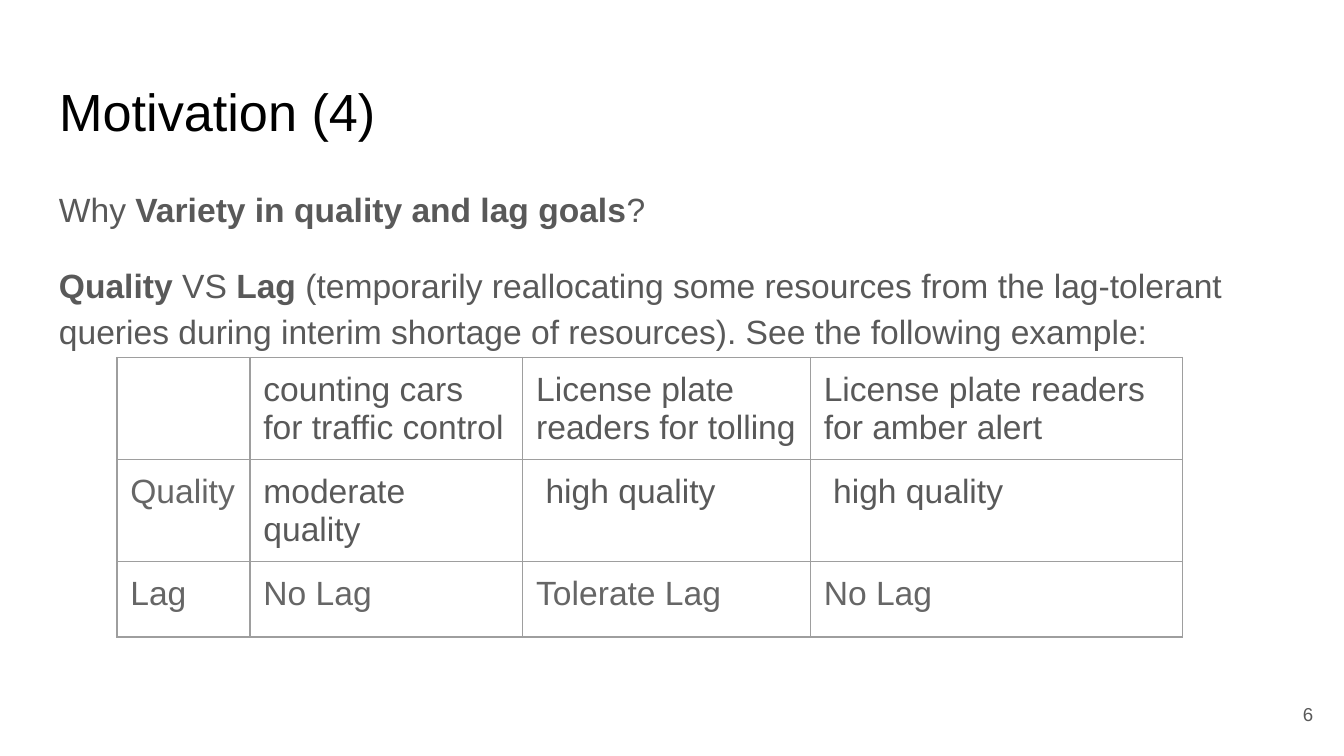
from pptx import Presentation
from pptx.dml.color import RGBColor
from pptx.enum.text import MSO_ANCHOR, MSO_AUTO_SIZE, PP_ALIGN
from pptx.oxml import parse_xml
from pptx.oxml.ns import nsdecls
from pptx.util import Inches, Pt

COLORS = {"title": "000000", "body": "595959", "label": "666666", "border": "9E9E9E"}
PAD = Inches(0.1)


def write(paragraph, text, size=18, color="body", bold=False, align=PP_ALIGN.LEFT):
    paragraph.alignment = align
    run = paragraph.add_run()
    run.text = text
    run.font.name = "Arial"
    run.font.size = Pt(size)
    run.font.bold = bold
    run.font.color.rgb = RGBColor.from_string(COLORS[color])


def set_frame(frame, anchor=MSO_ANCHOR.TOP):
    frame.word_wrap = True
    frame.auto_size = MSO_AUTO_SIZE.NONE
    frame.vertical_anchor = anchor
    frame.margin_left = frame.margin_right = PAD
    frame.margin_top = frame.margin_bottom = PAD
    return frame.paragraphs[0]


prs = Presentation()
prs.slide_width = Inches(10)
prs.slide_height = prs.slide_width * 9 // 16
slide = prs.slides.add_slide(prs.slide_layouts[5])
margin = Inches(0.34)
content_width = prs.slide_width - 2 * margin

title = slide.shapes.title
title.left, title.top = margin, Inches(0.49)
title.width, title.height = content_width, Inches(0.63)
write(set_frame(title.text_frame), "Motivation (4)", size=28, color="title")

question = slide.shapes.add_textbox(margin, Inches(1.26), content_width, Inches(3.74))
why = set_frame(question.text_frame)
tradeoff = question.text_frame.add_paragraph()
tradeoff.space_before = tradeoff.space_after = Pt(16)
statements = [
    (why, [("Why ", False), ("Variety in quality and lag goals", True), ("?", False)]),
    (tradeoff, [
        ("Quality", True),
        (" VS ", False),
        ("Lag", True),
        (" (temporarily reallocating some resources from the lag-tolerant queries during "
         "interim shortage of resources). See the following example:", False),
    ]),
]
for paragraph, pieces in statements:
    paragraph.line_spacing = 1.15
    for text, bold in pieces:
        write(paragraph, text, bold=bold)

goals = [
    ["", "counting cars for traffic control", "License plate readers for tolling",
     "License plate readers for amber alert"],
    ["Quality", "moderate quality", " high quality", " high quality"],
    ["Lag", "No Lag", "Tolerate Lag", "No Lag"],
]
column_widths = [0.99, 2.03, 2.14, 2.77]
row_heights = [0.76, 0.76, 0.56]
table = slide.shapes.add_table(
    len(goals), len(column_widths), Inches(0.87), Inches(2.66),
    Inches(sum(column_widths)), Inches(sum(row_heights))).table
table.first_row = table.horz_banding = False
for column, width in zip(table.columns, column_widths):
    column.width = Inches(width)
for row, height in zip(table.rows, row_heights):
    row.height = Inches(height)

for r, goal in enumerate(goals):
    for c, text in enumerate(goal):
        cell = table.cell(r, c)
        cell.margin_left = cell.margin_right = PAD
        cell.margin_top = cell.margin_bottom = PAD
        cell.vertical_anchor = MSO_ANCHOR.TOP
        properties = cell._tc.get_or_add_tcPr()
        for side in "LRTB":
            properties.append(parse_xml(
                f'<a:ln{side} {nsdecls("a")} w="{Pt(0.75)}"><a:solidFill>'
                f'<a:srgbClr val="{COLORS["border"]}"/></a:solidFill></a:ln{side}>'))
        cell.fill.background()
        if text:
            is_label = r == 2 or c == 0
            write(cell.text_frame.paragraphs[0], text, color="label" if is_label else "body")

page_number = slide.shapes.add_textbox(Inches(9.27), Inches(5.1), Inches(0.6), Inches(0.43))
write(set_frame(page_number.text_frame, MSO_ANCHOR.MIDDLE), "6", size=10, align=PP_ALIGN.RIGHT)

prs.save("out.pptx")
